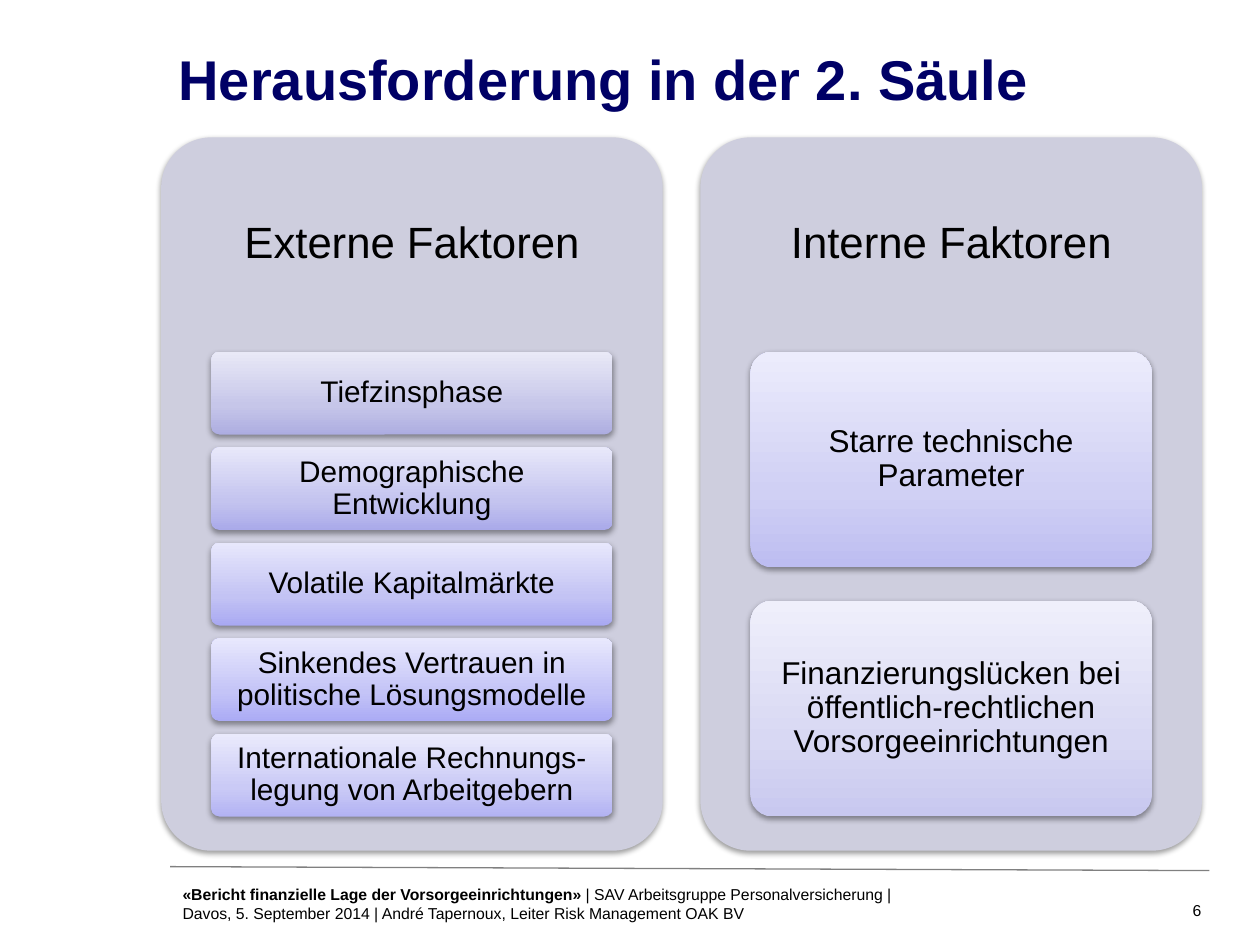
from copy import deepcopy

from lxml.etree import SubElement
from pptx import Presentation
from pptx.dml.color import RGBColor
from pptx.enum.shapes import MSO_CONNECTOR as Connector, MSO_SHAPE as Shape
from pptx.enum.text import MSO_ANCHOR as Anchor, PP_ALIGN as Align
from pptx.oxml.ns import qn
from pptx.util import Cm, Pt

BLACK = RGBColor(0x00, 0x00, 0x00)
NAVY = RGBColor(0x00, 0x00, 0x66)
GREY = RGBColor(0x80, 0x80, 0x80)
PANEL_FILL = RGBColor(0xCE, 0xCE, 0xDE)

# Gradient colours of each card, from bottom to top
LAVENDER = [RGBColor(0xAD, 0xAD, 0xE1), RGBColor(0xC6, 0xC6, 0xE9), RGBColor(0xE9, 0xE9, 0xF7)]
LILAC = [RGBColor(0xAA, 0xAA, 0xEA), RGBColor(0xC4, 0xC4, 0xEF), RGBColor(0xE8, 0xE8, 0xFA)]
VIOLET = [RGBColor(0xA9, 0xA9, 0xF2), RGBColor(0xC3, 0xC3, 0xF4), RGBColor(0xE7, 0xE7, 0xFC)]
IRIS = [RGBColor(0xAB, 0xAB, 0xF5), RGBColor(0xC4, 0xC4, 0xF7), RGBColor(0xE8, 0xE8, 0xFD)]
PERIWINKLE = [RGBColor(0xB3, 0xB3, 0xF3), RGBColor(0xCA, 0xCA, 0xF6), RGBColor(0xEA, 0xEA, 0xFC)]
MIST = [RGBColor(0xBD, 0xBD, 0xF1), RGBColor(0xD0, 0xD0, 0xF4), RGBColor(0xEC, 0xEC, 0xFC)]
PEARL = [RGBColor(0xC8, 0xC8, 0xEF), RGBColor(0xD8, 0xD8, 0xF3), RGBColor(0xEF, 0xEF, 0xFB)]
STOP_POSITIONS = [0, 0.35, 1]

PANEL_LEFT, PANEL_TOP, PANEL_PITCH = 3.25, 2.77, 10.87
PANEL_WIDTH, PANEL_HEIGHT, HEADING_HEIGHT = 10.11, 14.38, 4.32
CARD_INSET, CARD_TOP, CARDS_HEIGHT = 1.01, 7.09, 9.37
GAP_RATIO = 2 / 13  # gap between cards, relative to the card height

PANELS = [
    ("Externe Faktoren", 17, [
        ("Tiefzinsphase", LAVENDER),
        ("Demographische Entwicklung", LILAC),
        ("Volatile Kapitalmärkte", VIOLET),
        ("Sinkendes Vertrauen in politische Lösungsmodelle", IRIS),
        ("Internationale Rechnungs-legung von Arbeitgebern", PERIWINKLE),
    ]),
    ("Interne Faktoren", 18, [
        ("Starre technische Parameter", MIST),
        ("Finanzierungslücken bei öffentlich-rechtlichen Vorsorgeeinrichtungen", PEARL),
    ]),
]
FOOTER = [
    ("«Bericht finanzielle Lage der Vorsorgeeinrichtungen» ", True),
    ("| SAV Arbeitsgruppe Personalversicherung | Davos, 5. September 2014 "
     "| André Tapernoux, Leiter Risk Management OAK BV", False),
]


def set_attributes(target, values):
    for name, value in values.items():
        setattr(target, name, value)


def write_text(shape, runs, size, color=BLACK, align=Align.LEFT,
               anchor=Anchor.TOP, margins=(0, 0), spacing=1.0):
    """Fill a shape with one paragraph of (text, bold) runs."""
    horizontal, vertical = (Cm(margin) for margin in margins)
    frame = shape.text_frame
    set_attributes(frame, {
        "word_wrap": True, "vertical_anchor": anchor,
        "margin_left": horizontal, "margin_right": horizontal,
        "margin_top": vertical, "margin_bottom": vertical,
    })
    paragraph = frame.paragraphs[0]
    set_attributes(paragraph, {"alignment": align, "line_spacing": spacing})
    for text, bold in runs:
        run = paragraph.add_run()
        run.text = text
        set_attributes(run.font, {"name": "Arial", "size": Pt(size), "bold": bold})
        run.font.color.rgb = color


def add_text(slide, box, runs, size, **text_format):
    shape = slide.shapes.add_textbox(*(Cm(length) for length in box))
    write_text(shape, runs, size, **text_format)


def add_shadow(shape):
    shape.shadow.inherit = False
    effects = shape._element.spPr.find(qn("a:effectLst"))
    shadow = SubElement(effects, qn("a:outerShdw"), blurRad="40000",
                        dist="20000", dir="5400000", rotWithShape="0")
    color = SubElement(shadow, qn("a:srgbClr"), val="000000")
    SubElement(color, qn("a:alpha"), val="38000")


def add_rounded_box(slide, box):
    shape = slide.shapes.add_shape(Shape.ROUNDED_RECTANGLE, *(Cm(length) for length in box))
    shape.adjustments[0] = 0.1
    shape.line.fill.background()
    add_shadow(shape)
    return shape


def fill_gradient(shape, colors):
    shape.fill.gradient()
    shape.fill.gradient_angle = 90
    stop_list = shape._element.spPr.find(".//" + qn("a:gsLst"))
    stop_list.append(deepcopy(stop_list[0]))
    for stop, position, color in zip(shape.fill.gradient_stops, STOP_POSITIONS, colors):
        stop.position = position
        stop.color.rgb = color


def add_card(slide, box, text, size, colors):
    card = add_rounded_box(slide, box)
    fill_gradient(card, colors)
    write_text(card, [(text, False)], size, align=Align.CENTER,
               anchor=Anchor.MIDDLE, margins=(0.12, 0.09), spacing=0.9)


def add_panel(slide, left, heading, card_size, cards):
    panel = add_rounded_box(slide, (left, PANEL_TOP, PANEL_WIDTH, PANEL_HEIGHT))
    panel.fill.solid()
    panel.fill.fore_color.rgb = PANEL_FILL
    add_text(slide, (left, PANEL_TOP, PANEL_WIDTH, HEADING_HEIGHT), [(heading, False)], 25,
             align=Align.CENTER, anchor=Anchor.MIDDLE, margins=(0.25, 0.25), spacing=0.9)

    count = len(cards)
    height = CARDS_HEIGHT / (count + (count - 1) * GAP_RATIO)
    for index, (text, colors) in enumerate(cards):
        top = CARD_TOP + index * height * (1 + GAP_RATIO)
        box = (left + CARD_INSET, top, PANEL_WIDTH - 2 * CARD_INSET, height)
        add_card(slide, box, text, card_size, colors)


def add_footer_line(slide):
    line = slide.shapes.add_connector(Connector.STRAIGHT, Cm(24.38), Cm(17.55),
                                      Cm(3.43), Cm(17.47))
    line.line.color.rgb = GREY
    line.line.width = Pt(0.75)
    SubElement(line._element.spPr, qn("a:effectLst"))


def main():
    presentation = Presentation()
    set_attributes(presentation, {"slide_width": Cm(25.4), "slide_height": Cm(19.05)})
    slide = presentation.slides.add_slide(presentation.slide_layouts[6])

    add_footer_line(slide)
    add_text(slide, (3.6, 0.9, 20.74, 1.8), [("Herausforderung in der 2. Säule", True)], 32,
             color=NAVY)
    for index, (heading, card_size, cards) in enumerate(PANELS):
        add_panel(slide, PANEL_LEFT + index * PANEL_PITCH, heading, card_size, cards)
    add_text(slide, (3.43, 17.7, 15.32, 1.02), FOOTER, 9, margins=(0.25, 0.13))
    add_text(slide, (23.2, 18.14, 1.02, 0.41), [("6", False)], 9, align=Align.RIGHT,
             spacing=1.05)
    presentation.save("out.pptx")


if __name__ == "__main__":
    main()
